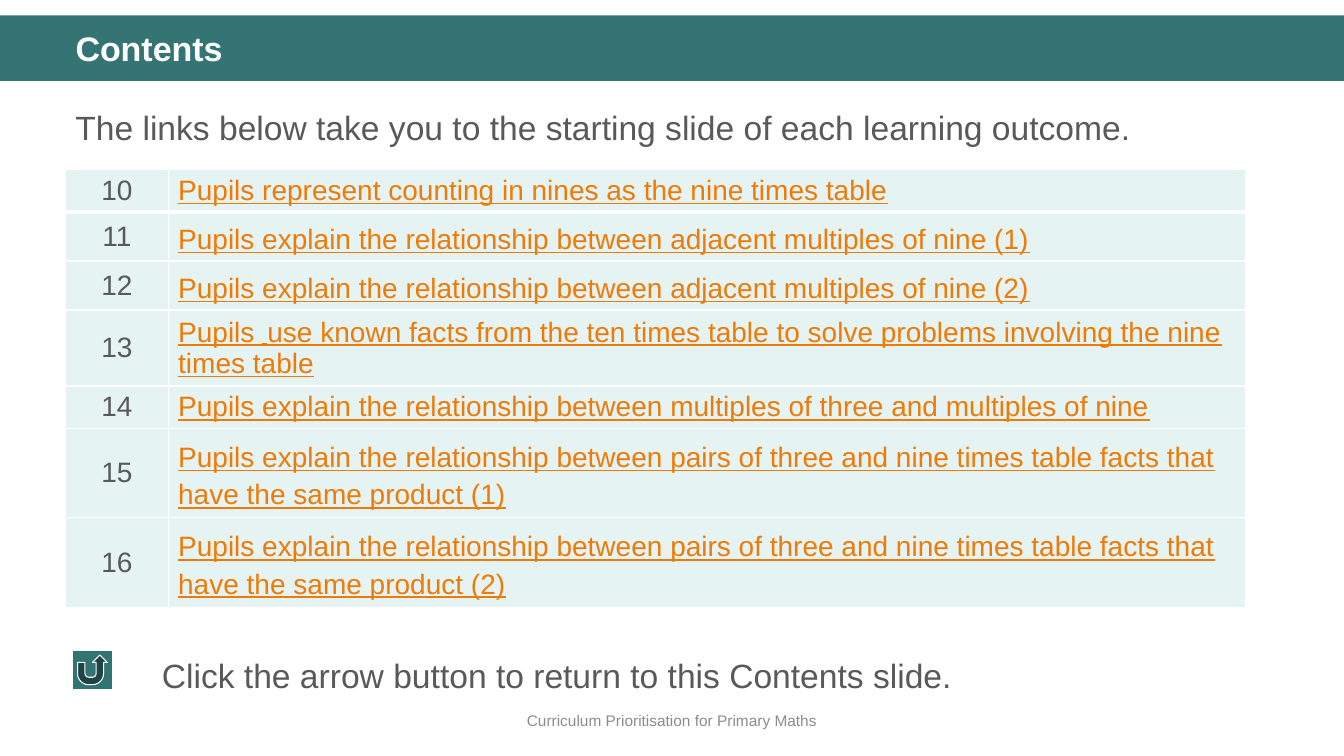
from lxml import etree
from pptx import Presentation
from pptx.dml.color import RGBColor
from pptx.enum.shapes import MSO_SHAPE
from pptx.enum.text import MSO_ANCHOR, PP_ALIGN
from pptx.oxml.ns import qn
from pptx.util import Cm, Pt

BAR = MSO_SHAPE.RECTANGLE
RETURN_BUTTON = MSO_SHAPE.ACTION_BUTTON_RETURN
TOP, MIDDLE = MSO_ANCHOR.TOP, MSO_ANCHOR.MIDDLE
LEFT, CENTER = PP_ALIGN.LEFT, PP_ALIGN.CENTER

COLORS = {
    "banner": "347574",
    "button": "327473",
    "white": "FFFFFF",
    "body": "595959",
    "footer": "8C8C8C",
    "link": "EE7B08",
    "cell": "E5F3F2",
}
SLIDE_WIDTH, SLIDE_HEIGHT = 33.87, 19.05
MARGIN = 1.65
TEXT_WIDTH = 30.94
COLUMN_WIDTHS = (2.59, 27.15)
SINGLE, SPACED, DOUBLE, SPACED_DOUBLE = 1.04, 1.19, 1.83, 2.15

OUTCOMES = [
    ("10", ["Pupils represent counting in nines as the nine times table"], SINGLE, 1.0),
    ("11", ["Pupils explain the relationship between adjacent multiples of nine (1)"], SPACED, 1.2),
    ("12", ["Pupils explain the relationship between adjacent multiples of nine (2)"], SPACED, 1.2),
    ("13", ["Pupils ", " ", "use known facts from the ten times table to solve problems "
            "involving the nine times table"], DOUBLE, 1.0),
    ("14", ["Pupils explain the relationship between multiples of three and multiples of nine"],
     SINGLE, 1.0),
    ("15", ["Pupils explain the relationship between pairs of three and nine times table facts "
            "that have the same product (1)"], SPACED_DOUBLE, 1.2),
    ("16", ["Pupils explain the relationship between pairs of three and nine times table facts "
            "that have the same product (2)"], SPACED_DOUBLE, 1.2),
]


def color(name):
    return RGBColor.from_string(COLORS[name])


def add_run(paragraph, text, size, color_name, font="Arial", bold=False, underline=False):
    run = paragraph.add_run()
    run.text = text
    run.font.name = font
    run.font.size = Pt(size)
    run.font.bold = bold
    run.font.underline = underline
    run.font.color.rgb = color(color_name)


def add_line_of_text(slide, box, text, size, color_name, align=LEFT, anchor=TOP):
    frame = slide.shapes.add_textbox(*map(Cm, box)).text_frame
    frame.word_wrap = True
    frame.vertical_anchor = anchor
    paragraph = frame.paragraphs[0]
    paragraph.alignment = align
    add_run(paragraph, text, size, color_name)
    return paragraph


def add_banner(slide, left, top, width, height):
    banner = slide.shapes.add_shape(BAR, Cm(left), Cm(top), Cm(width), Cm(height))
    banner.shadow.inherit = False
    banner.fill.solid()
    banner.fill.fore_color.rgb = color("banner")
    banner.line.fill.background()
    slide.shapes._spTree.insert(2, banner._element)

    title = slide.shapes.title
    title.left, title.top = Cm(left + MARGIN), Cm(top + 0.3)
    title.width, title.height = Cm(TEXT_WIDTH), Cm(1.2)
    frame = title.text_frame
    frame.word_wrap = True
    frame.vertical_anchor = TOP
    heading = frame.paragraphs[0]
    heading.alignment = LEFT
    heading.line_spacing = 0.9
    add_run(heading, "Contents", 24.3, "white", bold=True)


def add_intro(slide, left, top, width, height):
    intro = add_line_of_text(
        slide, (left, top, width, height),
        "The links below take you to the starting slide of each learning outcome.", 24, "body")
    intro.line_spacing = 1.2
    intro.space_before = Pt(10)


def style_cell(cell, bottom_width):
    cell.fill.solid()
    cell.fill.fore_color.rgb = color("cell")
    cell.vertical_anchor = MIDDLE
    cell.margin_left = cell.margin_right = Cm(0.25)
    cell.margin_top = cell.margin_bottom = Cm(0.11)
    properties = cell._tc.get_or_add_tcPr()
    edges = (("a:lnL", 1), ("a:lnR", 1), ("a:lnT", 1), ("a:lnB", bottom_width))
    for position, (edge, points) in enumerate(edges):
        border = etree.Element(qn(edge), w=str(Pt(points)))
        fill = etree.SubElement(border, qn("a:solidFill"))
        etree.SubElement(fill, qn("a:srgbClr"), val=COLORS["white"])
        properties.insert(position, border)


def add_outcomes(slide, left, top):
    height = sum(outcome[2] for outcome in OUTCOMES)
    table = slide.shapes.add_table(
        len(OUTCOMES), len(COLUMN_WIDTHS),
        Cm(left), Cm(top), Cm(sum(COLUMN_WIDTHS)), Cm(height)).table
    table.first_row = table.horz_banding = False
    for column, width in zip(table.columns, COLUMN_WIDTHS):
        column.width = Cm(width)
    for index, (number, pieces, row_height, spacing) in enumerate(OUTCOMES):
        row = table.rows[index]
        row.height = Cm(row_height)
        number_cell, outcome_cell = row.cells
        for cell in (number_cell, outcome_cell):
            style_cell(cell, 3 if index == 0 else 1)
        label = number_cell.text_frame.paragraphs[0]
        label.alignment = CENTER
        add_run(label, number, 20, "body")
        outcome = outcome_cell.text_frame.paragraphs[0]
        outcome.line_spacing = spacing
        for piece in pieces:
            font, size = ("Arial", 20) if piece.strip() else ("Calibri", 16)
            add_run(outcome, piece, size, "link", font, underline=True)


def add_return_hint(slide, left, top, width, height):
    button = slide.shapes.add_shape(RETURN_BUTTON, Cm(left), Cm(top), Cm(1), Cm(1))
    button.shadow.inherit = False
    button.fill.solid()
    button.fill.fore_color.rgb = color("button")
    button.line.color.rgb = color("white")
    button.line.width = Pt(0.75)
    indent = 2
    add_line_of_text(slide, (left + indent, top, width - indent, height),
                     "Click the arrow button to return to this Contents slide.", 24, "body")


def add_footer(slide, left, top, width, height):
    add_line_of_text(slide, (left, top, width, height),
                     "Curriculum Prioritisation for Primary Maths", 11, "footer", CENTER, MIDDLE)


def main():
    deck = Presentation()
    deck.slide_width, deck.slide_height = Cm(SLIDE_WIDTH), Cm(SLIDE_HEIGHT)
    slide = deck.slides.add_slide(deck.slide_layouts[5])
    add_banner(slide, 0, 0.39, SLIDE_WIDTH, 1.65)
    add_footer(slide, 0, 17.65, SLIDE_WIDTH, 1.02)
    add_intro(slide, MARGIN, 2.36, TEXT_WIDTH, 1.6)
    add_outcomes(slide, MARGIN, 4.27)
    add_return_hint(slide, 1.83, 16.38, 30.76, 1.27)
    deck.save("out.pptx")


if __name__ == "__main__":
    main()
